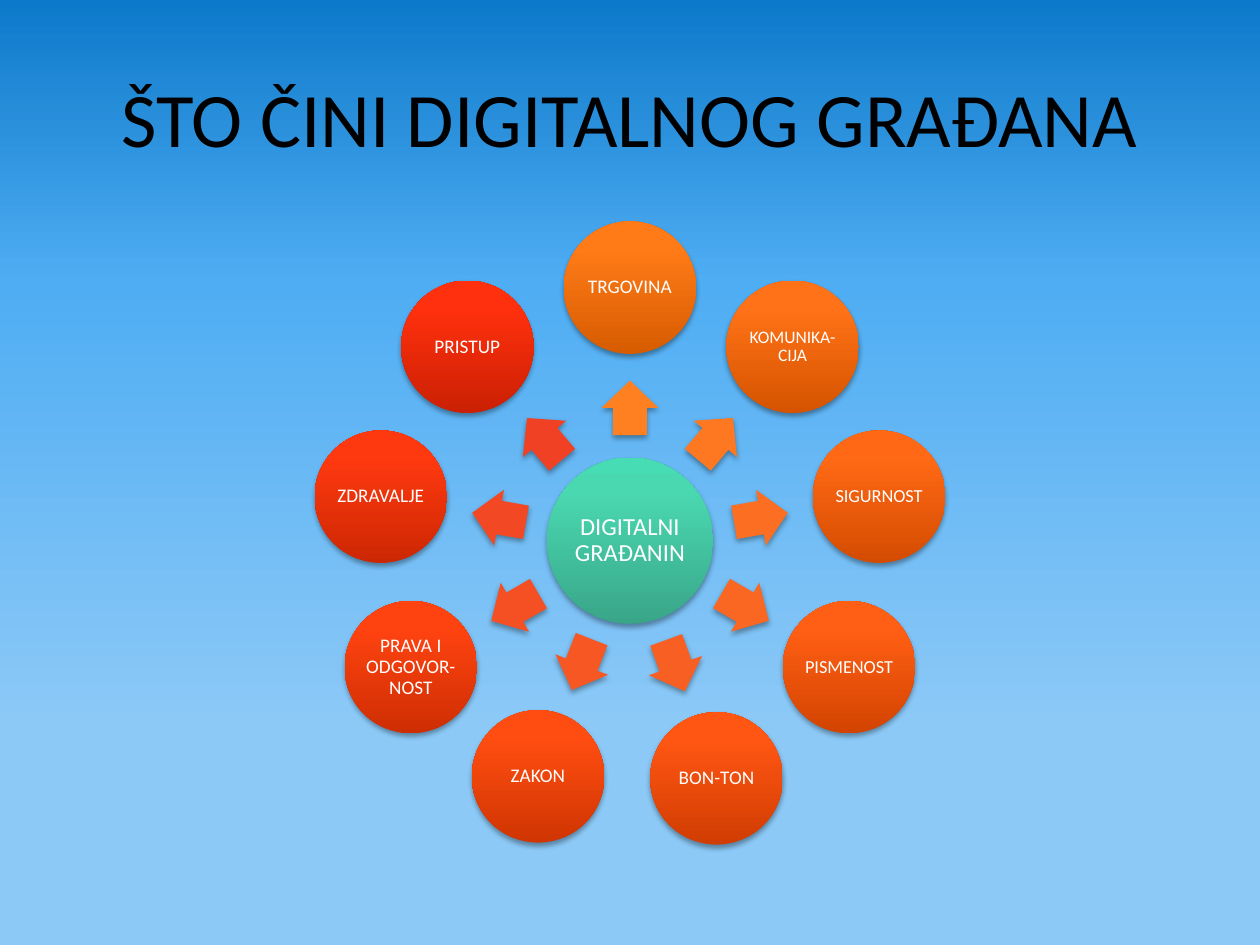
from copy import deepcopy
from math import cos, radians, sin

from lxml import etree
from pptx import Presentation
from pptx.dml.color import RGBColor
from pptx.enum.shapes import MSO_SHAPE
from pptx.enum.text import MSO_ANCHOR, PP_ALIGN
from pptx.oxml.ns import qn
from pptx.util import Cm, Pt

OVAL = MSO_SHAPE.OVAL
RIGHT_ARROW = MSO_SHAPE.RIGHT_ARROW
MIDDLE = MSO_ANCHOR.MIDDLE
CENTER = PP_ALIGN.CENTER

CENTER_X, CENTER_Y = 12.7, 10.9
HUB_SIZE, TOPIC_SIZE = 3.35, 2.67
TOPIC_RADIUS, ARROW_RADIUS = 5.1, 2.68
ARROW_WIDTH, ARROW_HEIGHT = 1.1, 1.14

topics = [
    ("TRGOVINA", 11, 270, "FF8021", ("D75C00", "FF7B18", "FF7C19")),
    ("KOMUNIKA-CIJA", 10, 310, "FD7821", ("D65400", "FF7217", "FF7318")),
    ("SIGURNOST", 10.5, 350, "FC6F22", ("D44C01", "FF6915", "FF6917")),
    ("PISMENOST", 10.5, 30, "FA6722", ("D34401", "FF5F14", "FF6015")),
    ("BON-TON", 11, 70, "F85F22", ("D13D02", "FF5613", "FF5714")),
    ("ZAKON", 11, 111.3, "F65723", ("D03502", "FF4D11", "FF4D13")),
    ("PRAVA I ODGOVOR-NOST", 11, 150, "F55023", ("CE2E03", "FF4310", "FF4411")),
    ("ZDRAVALJE", 11, 190, "F34824", ("CC2703", "FF390F", "FF3A10")),
    ("PRISTUP", 11, 230, "F14124", ("CB2004", "FF300D", "FF310F")),
]


def color(value):
    return RGBColor.from_string(value)


def set_gradient(fill, element, angle, positions, colors):
    fill.gradient()
    fill.gradient_angle = angle
    stop_list = next(element.iter(qn("a:gsLst")))
    stop_list.append(deepcopy(stop_list[-1]))
    for stop, position, value in zip(fill.gradient_stops, positions, colors):
        stop.position = position
        stop.color.rgb = color(value)


presentation = Presentation()
presentation.slide_width = Cm(25.4)
presentation.slide_height = Cm(19.05)
slide = presentation.slides.add_slide(presentation.slide_layouts[6])
set_gradient(slide.background.fill, slide._element, 270,
             (0, 0.3, 0.77), ("0D79CA", "4FADF3", "8CC9F7"))

title = slide.shapes.add_textbox(Cm(1.27), Cm(0.76), Cm(22.86), Cm(3.18))
labels = [(title, "ŠTO ČINI DIGITALNOG GRAĐANA", 44, "000000")]

circles = [("DIGITALNI GRAĐANIN", 14, CENTER_X, CENTER_Y, HUB_SIZE,
            ("39A688", "4AD8B1", "47DCB3"))]
diagram_shapes = []
for text, size, angle, arrow_color, circle_colors in topics:
    across, down = cos(radians(angle)), sin(radians(angle))
    arrow = slide.shapes.add_shape(
        RIGHT_ARROW,
        Cm(CENTER_X + ARROW_RADIUS * across - ARROW_WIDTH / 2),
        Cm(CENTER_Y + ARROW_RADIUS * down - ARROW_HEIGHT / 2),
        Cm(ARROW_WIDTH), Cm(ARROW_HEIGHT))
    arrow.rotation = angle
    arrow.adjustments[0] = 0.6
    arrow.adjustments[1] = 0.5
    arrow.fill.solid()
    arrow.fill.fore_color.rgb = color(arrow_color)
    diagram_shapes.append(arrow)
    circles.append((text, size, CENTER_X + TOPIC_RADIUS * across,
                    CENTER_Y + TOPIC_RADIUS * down, TOPIC_SIZE, circle_colors))

for text, size, x, y, diameter, circle_colors in circles:
    circle = slide.shapes.add_shape(OVAL, Cm(x - diameter / 2), Cm(y - diameter / 2),
                                    Cm(diameter), Cm(diameter))
    set_gradient(circle.fill, circle._element, 90, (0, 0.8, 1), circle_colors)
    frame = circle.text_frame
    frame.margin_left = frame.margin_right = Cm(0.04)
    frame.margin_top = frame.margin_bottom = Cm(0.04)
    frame.paragraphs[0].line_spacing = 0.9
    diagram_shapes.append(circle)
    labels.append((circle, text, size, "FFFFFF"))

for shape in diagram_shapes:
    shape.line.fill.background()
    shape.shadow.inherit = False
    effects = shape._element.spPr.find(qn("a:effectLst"))
    shadow = etree.SubElement(effects, qn("a:outerShdw"), blurRad=str(Pt(3.1)),
                              dist=str(Pt(1.8)), dir="5400000", rotWithShape="0")
    shadow_color = etree.SubElement(shadow, qn("a:srgbClr"), val="000000")
    etree.SubElement(shadow_color, qn("a:alpha"), val="35000")

for shape, text, size, text_color in labels:
    frame = shape.text_frame
    frame.word_wrap = True
    frame.vertical_anchor = MIDDLE
    paragraph = frame.paragraphs[0]
    paragraph.alignment = CENTER
    run = paragraph.add_run()
    run.text = text
    run.font.name = "Calibri"
    run.font.size = Pt(size)
    run.font.color.rgb = color(text_color)

presentation.save("out.pptx")
